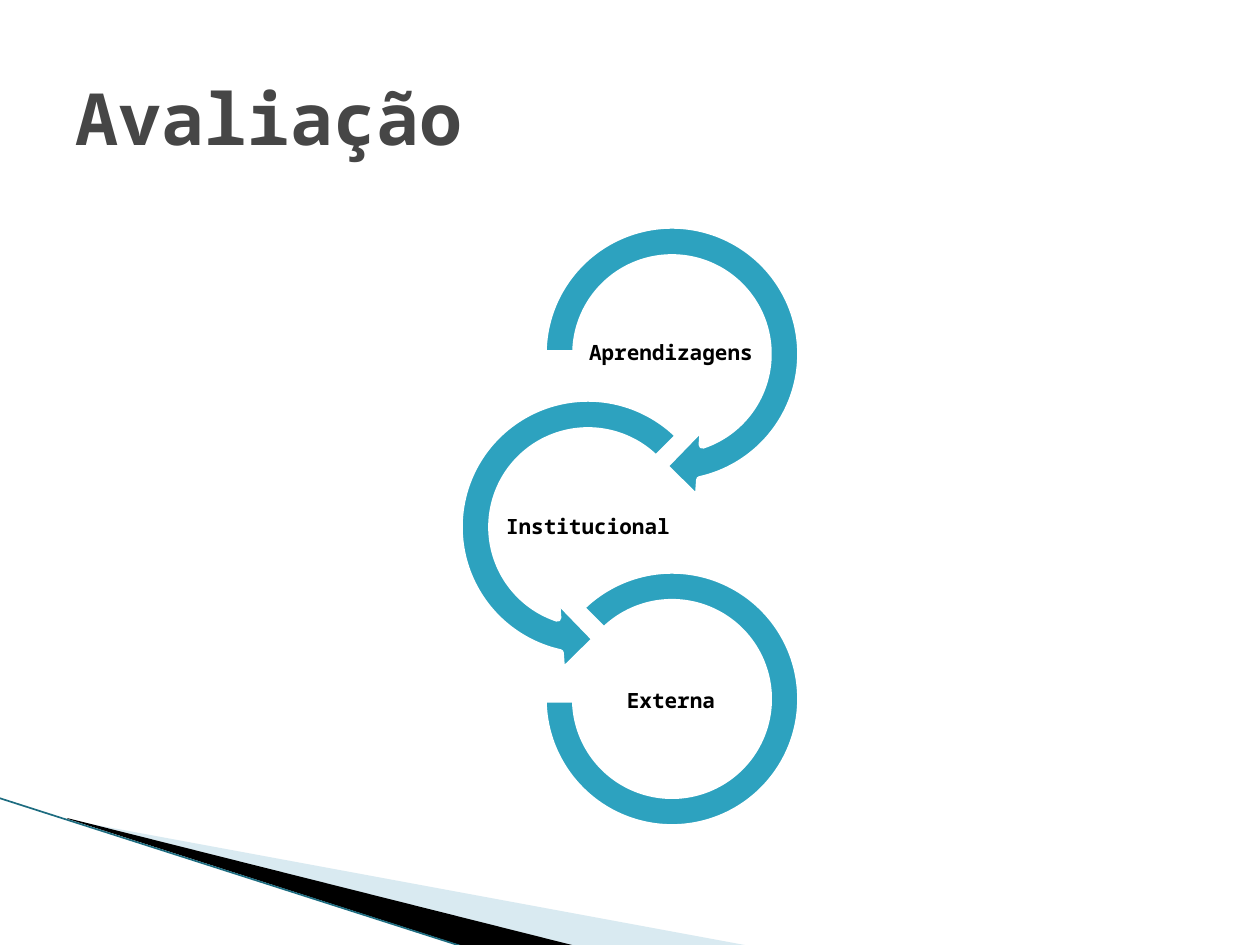
from dataclasses import dataclass

from lxml import etree
from pptx import Presentation
from pptx.dml.color import RGBColor
from pptx.enum.shapes import MSO_CONNECTOR, MSO_SHAPE
from pptx.enum.text import MSO_ANCHOR, PP_ALIGN
from pptx.oxml.ns import qn
from pptx.util import Pt

EMU_PER_PX = 914400 / 126
BLANK_LAYOUT = 6
STRAIGHT = MSO_CONNECTOR.STRAIGHT
RIGHT_ARROW = MSO_SHAPE.CIRCULAR_ARROW
LEFT_ARROW = MSO_SHAPE.LEFT_CIRCULAR_ARROW
BLOCK_ARC = MSO_SHAPE.BLOCK_ARC
MIDDLE = MSO_ANCHOR.MIDDLE
LEFT = PP_ALIGN.LEFT
CENTER = PP_ALIGN.CENTER


@dataclass(frozen=True)
class Theme:
    font: str = "Noto Sans Mono"
    title_color: str = "464646"
    label_color: str = "000000"
    ring: str = "2DA2BF"
    ring_outline: str = "FFFFFF"
    pale_wedge: str = "A0CBDC"
    dark_wedge: str = "000000"
    edge: str = "1D6C80"
    title_size: int = 41
    label_size: int = 12
    ring_outline_width: float = 4.33
    edge_width: float = 0.95


@dataclass(frozen=True)
class Box:
    left: int
    top: int
    width: int
    height: int

    def emu(self) -> tuple[int, ...]:
        return tuple(map(px, (self.left, self.top, self.width, self.height)))


@dataclass(frozen=True)
class Stage:
    label: str
    preset: MSO_SHAPE
    ring_box: Box
    adjustments: tuple[float, ...]
    label_left: int
    label_top: int


@dataclass(frozen=True)
class Wedge:
    points: tuple[tuple[int, int], ...]
    color: str
    opacity: int = 100


THEME = Theme()
LABEL_WIDTH, LABEL_HEIGHT = 166, 83
TITLE_BOX = Box(63, 38, 1134, 158)

STAGES = (
    Stage("Aprendizagens", RIGHT_ARROW, Box(522, 204, 300, 300),
          (0.11, 11.42, 45, 108, 0.125), 588, 312),
    Stage("Institucional", LEFT_ARROW, Box(438, 377, 300, 300),
          (0.11, 11.42, 63, 189, 0.125), 505, 486),
    Stage("Externa", BLOCK_ARC, Box(543, 570, 258, 258),
          (135, 108, 0.127), 588, 660),
)

WEDGES = (
    Wedge(((69, 820), (750, 946), (575, 946), (69, 819)), THEME.pale_wedge, 40),
    Wedge(((67, 818), (576, 946), (469, 948), (68, 819)), THEME.dark_wedge),
)


def px(value: int) -> int:
    return round(value * EMU_PER_PX)


def fill_shape(shape, color: str) -> None:
    shape.shadow.inherit = False
    shape.fill.solid()
    shape.fill.fore_color.rgb = RGBColor.from_string(color)


def draw_wedge(slide, wedge: Wedge) -> None:
    builder = slide.shapes.build_freeform(*wedge.points[0], scale=EMU_PER_PX)
    builder.add_line_segments(wedge.points[1:], close=True)
    shape = builder.convert_to_shape()
    fill_shape(shape, wedge.color)
    shape.line.fill.background()
    if wedge.opacity < 100:
        color = shape.fill._xPr.find(qn("a:solidFill"))[0]
        etree.SubElement(color, qn("a:alpha")).set("val", str(wedge.opacity * 1000))


def draw_edge(slide) -> None:
    edge = slide.shapes.add_connector(STRAIGHT, px(-1), px(798), px(467), px(948))
    edge.line.color.rgb = RGBColor.from_string(THEME.edge)
    edge.line.width = Pt(THEME.edge_width)
    etree.SubElement(edge._element.spPr, qn("a:effectLst"))


def draw_text(shapes, text: str, box: Box, size: int, color: str, alignment: PP_ALIGN):
    frame = shapes.add_textbox(*box.emu()).text_frame
    frame.word_wrap = True
    frame.vertical_anchor = MIDDLE
    frame.text = text
    paragraph = frame.paragraphs[0]
    paragraph.alignment = alignment
    font = paragraph.runs[0].font
    font.name = THEME.font
    font.size = Pt(size)
    font.bold = True
    font.color.rgb = RGBColor.from_string(color)
    return frame


def draw_stage(shapes, stage: Stage) -> None:
    ring = shapes.add_shape(stage.preset, *stage.ring_box.emu())
    for index, value in enumerate(stage.adjustments):
        ring.adjustments[index] = value
    fill_shape(ring, THEME.ring)
    ring.line.color.rgb = RGBColor.from_string(THEME.ring_outline)
    ring.line.width = Pt(THEME.ring_outline_width)

    box = Box(stage.label_left, stage.label_top, LABEL_WIDTH, LABEL_HEIGHT)
    frame = draw_text(shapes, stage.label, box, THEME.label_size, THEME.label_color, CENTER)
    frame.margin_left = frame.margin_right = px(1)
    frame.margin_top = frame.margin_bottom = px(1)
    frame.paragraphs[0].line_spacing = 0.9


def main() -> None:
    presentation = Presentation()
    presentation.slide_width = px(1260)
    presentation.slide_height = px(945)
    slide = presentation.slides.add_slide(presentation.slide_layouts[BLANK_LAYOUT])
    for wedge in WEDGES:
        draw_wedge(slide, wedge)
    draw_edge(slide)
    cycle = slide.shapes.add_group_shape()
    for stage in STAGES:
        draw_stage(cycle.shapes, stage)
    draw_text(slide.shapes, "Avaliação", TITLE_BOX, THEME.title_size, THEME.title_color, LEFT)
    presentation.save("out.pptx")


if __name__ == "__main__":
    main()
